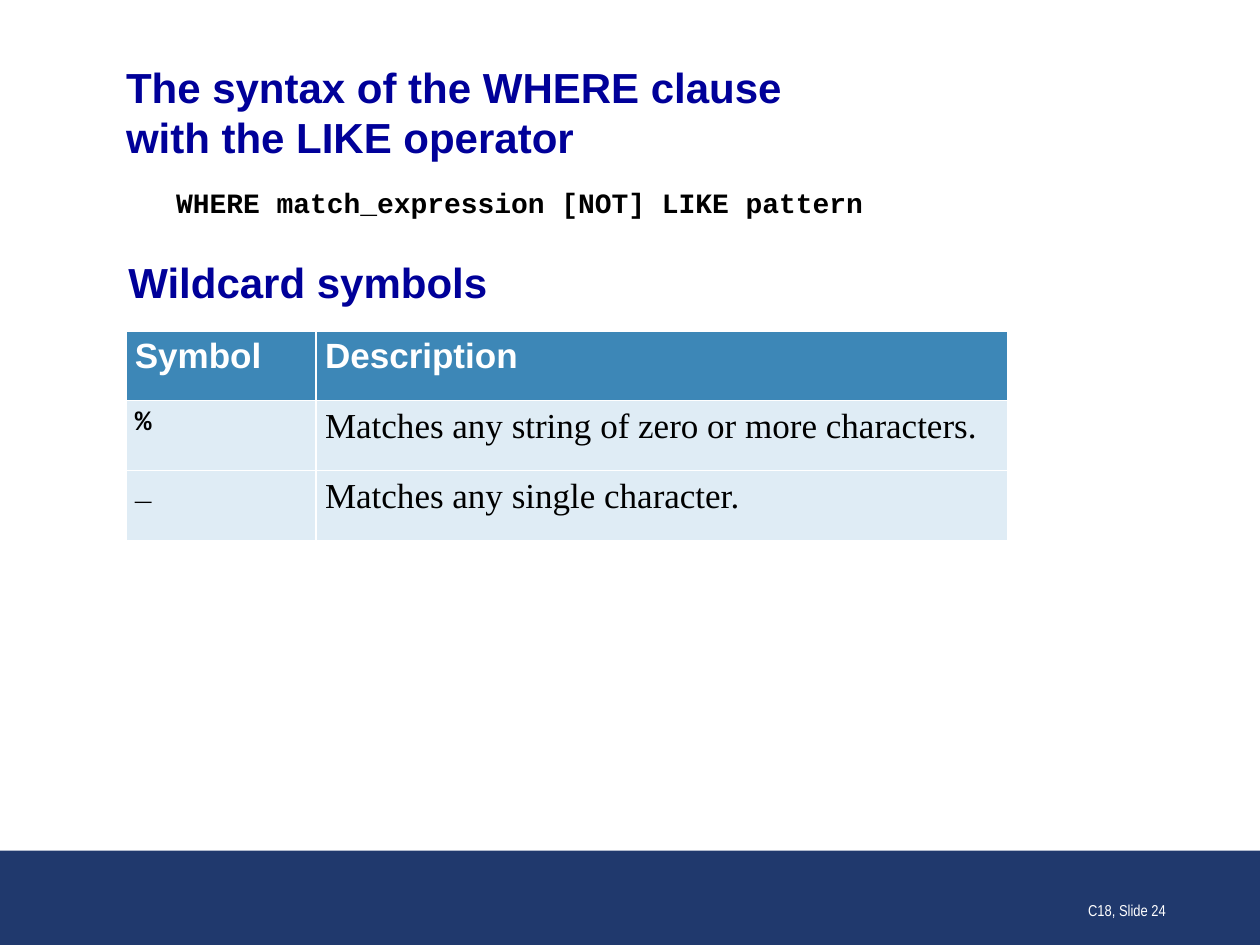
from copy import deepcopy

from pptx import Presentation
from pptx.dml.color import RGBColor
from pptx.enum.shapes import MSO_SHAPE
from pptx.enum.text import MSO_ANCHOR, MSO_AUTO_SIZE, PP_ALIGN
from pptx.oxml.ns import qn
from pptx.util import Inches, Pt

RECT = MSO_SHAPE.RECTANGLE
MIDDLE, BOTTOM = MSO_ANCHOR.MIDDLE, MSO_ANCHOR.BOTTOM
LEFT, RIGHT = PP_ALIGN.LEFT, PP_ALIGN.RIGHT
NO_FIT = MSO_AUTO_SIZE.NONE
TITLE_ONLY = 5
W, H = Inches(10), Inches(7.5)
COLORS = {
    "navy": "20396D", "heading": "000099", "header": "3D87B7",
    "row": "DFECF5", "black": "000000", "white": "FFFFFF",
}
HEADING = dict(font="Arial", size=24, color="heading", bold=True)
CODE = dict(font="Courier New", size=16, bold=True)
PROSE = dict(font="Times New Roman", size=20)
HEADER = dict(font="Arial", size=20, color="white", bold=True)


def rgb(name):
    """Return the named colour."""
    return RGBColor.from_string(COLORS[name])


def share(x, y, w, h):
    """Turn shares of the slide into a box of lengths."""
    return int(x * W), int(y * H), int(w * W), int(h * H)


def write(p, text, font, size, color="black", bold=False, align=LEFT,
          before=0, after=0, indent=0):
    """Fill a paragraph with formatted text, where \\v breaks the line."""
    p.text = text
    p.alignment = align
    p.space_before, p.space_after = Pt(before), Pt(after)
    if indent:
        p._p.get_or_add_pPr().set("marL", str(Inches(indent)))
    for r in p.runs:
        r.font.name, r.font.size, r.font.bold = font, Pt(size), bold
        r.font.color.rgb = rgb(color)
    for br in p._p.findall(qn("a:br")):
        br.append(deepcopy(p.runs[0]._r.rPr))


def add_text_box(s, box):
    """Add a wrapping text box and return its text frame."""
    tf = s.shapes.add_textbox(*box).text_frame
    tf.word_wrap = True
    return tf


def add_title(s, box):
    """Place and format the title placeholder."""
    sp = s.shapes.title
    sp.left, sp.top, sp.width, sp.height = box
    tf = sp.text_frame
    tf.margin_left = tf.margin_top = tf.margin_right = tf.margin_bottom = 0
    tf.vertical_anchor, tf.auto_size = MIDDLE, NO_FIT
    write(tf.paragraphs[0],
          "The syntax of the WHERE clause \vwith the LIKE operator",
          after=6, **HEADING)


def add_syntax(s, box):
    """Add the code line and the heading of the table."""
    tf = add_text_box(s, box)
    write(tf.paragraphs[0], "WHERE match_expression [NOT] LIKE pattern",
          indent=0.38, after=6, **CODE)
    write(tf.add_paragraph(), "Wildcard symbols", before=15, after=6, **HEADING)


def add_symbols(s, box):
    """Add the table of wildcard symbols."""
    rows = [
        ("Symbol", "Description"),
        ("%", "Matches any string of zero or more characters."),
        ("_", "Matches any single character."),
    ]
    table = s.shapes.add_table(len(rows), 2, *box).table
    table.columns[0].width = Inches(1.51)
    table.columns[1].width = box[2] - Inches(1.51)
    for i, row in enumerate(rows):
        for j, text in enumerate(row):
            cell = table.cell(i, j)
            cell.margin_left = cell.margin_right = Inches(0.07)
            cell.margin_top = cell.margin_bottom = Inches(0.05)
            cell.fill.solid()
            cell.fill.fore_color.rgb = rgb("row" if i else "header")
            style = (CODE, PROSE)[j] if i else HEADER
            write(cell.text_frame.paragraphs[0], text, after=6, **style)


def add_footer(s, bar, label):
    """Add the bottom bar and the slide label on it."""
    sp = s.shapes.add_shape(RECT, *bar)
    sp.shadow.inherit = False
    sp.fill.solid()
    sp.fill.fore_color.rgb = rgb("navy")
    sp.line.fill.background()
    tf = add_text_box(s, label)
    tf.vertical_anchor = BOTTOM
    write(tf.paragraphs[0], "C18, Slide 24", font="Arial Narrow", size=9,
          color="white", align=RIGHT)


def main():
    """Build the slide and save it."""
    prs = Presentation()
    prs.slide_width, prs.slide_height = W, H
    s = prs.slides.add_slide(prs.slide_layouts[TITLE_ONLY])
    add_footer(s, share(0, 0.9, 1, 0.1), share(0.725, 0.91, 0.21, 0.07))
    add_title(s, share(0.1, 0.064, 0.8, 0.108))
    add_symbols(s, share(0.1, 0.35, 0.7, 0.222))
    add_syntax(s, share(0.092, 0.19, 0.808, 0.322))
    prs.save("out.pptx")


if __name__ == "__main__":
    main()
